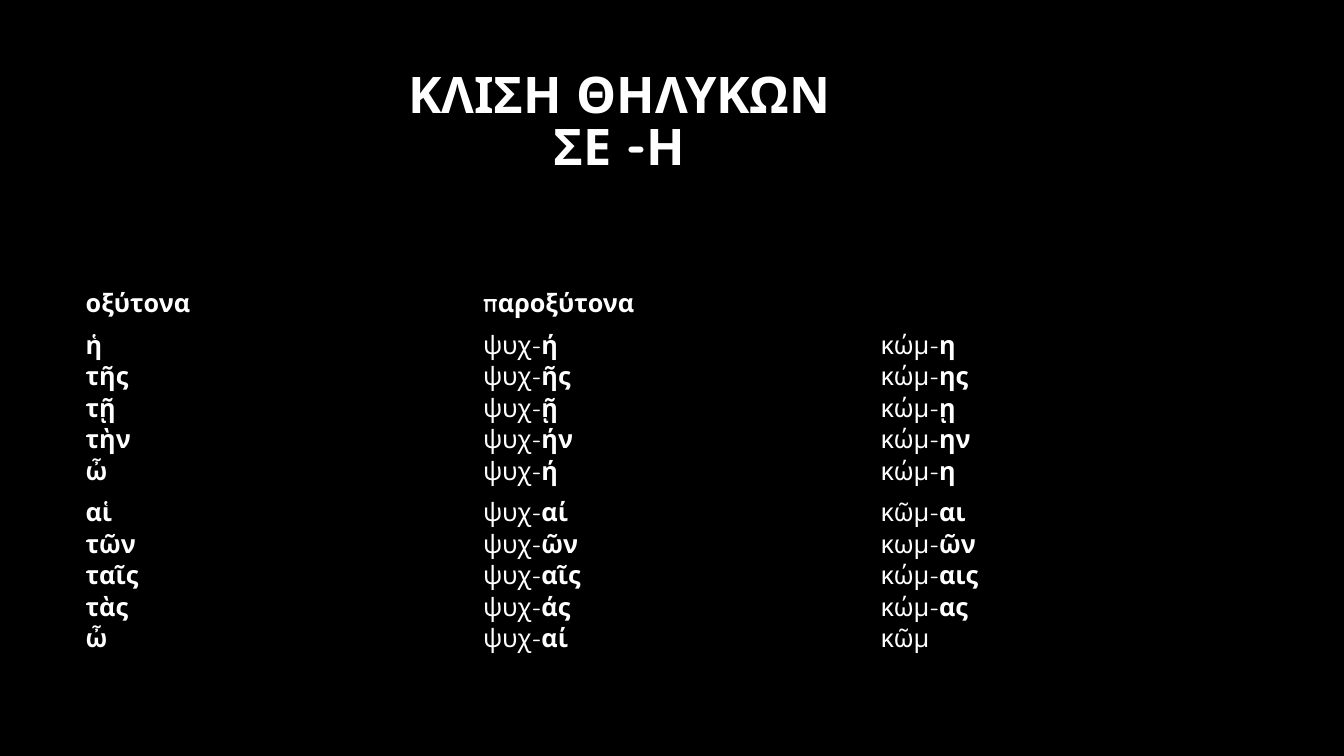
from pptx import Presentation
from pptx.dml.color import RGBColor
from pptx.enum.text import MSO_ANCHOR, PP_ALIGN
from pptx.oxml.ns import qn
from pptx.util import Pt

MIDDLE = MSO_ANCHOR.MIDDLE
CENTER = PP_ALIGN.CENTER
BLACK = RGBColor(0, 0, 0)
WHITE = RGBColor(255, 255, 255)
NO_GRID_STYLE = "{2D5ABB26-0587-4C30-8999-92F81FD0307C}"

TITLE = "ΚΛΙΣΗ ΘΗΛΥΚΩΝ\vΣΕ -Η"
HEADINGS = ["οξύτονα", "παροξύτονα"]
DECLENSION = [
    ["ἡ τῆς τῇ τὴν ὦ",
     "ψυχ-ή ψυχ-ῆς ψυχ-ῇ ψυχ-ήν ψυχ-ή",
     "κώμ-η κώμ-ης κώμ-ῃ κώμ-ην κώμ-η"],
    ["αἱ τῶν ταῖς τὰς ὦ",
     "ψυχ-αί ψυχ-ῶν ψυχ-αῖς ψυχ-άς ψυχ-αί",
     "κῶμ-αι κωμ-ῶν κώμ-αις κώμ-ας κῶμ"],
]


class GrammarSlide:
    font_name = "Quicksand"
    title_size = 36
    body_size = 18

    def __init__(self, presentation):
        self.slide = presentation.slides.add_slide(presentation.slide_layouts[6])
        background = self.slide.background.fill
        background.solid()
        background.fore_color.rgb = BLACK

    def style(self, run, size, bold=True):
        run.font.name = self.font_name
        run.font.size = Pt(size)
        run.font.bold = bold
        run.font.color.rgb = WHITE

    def title(self, text, left, top, width, height):
        frame = self.slide.shapes.add_textbox(
            Pt(left), Pt(top), Pt(width), Pt(height)).text_frame
        frame.word_wrap = True
        frame.vertical_anchor = MIDDLE
        frame.text = text
        heading = frame.paragraphs[0]
        heading.alignment = CENTER
        heading.line_spacing = 0.86
        for run in heading.runs:
            self.style(run, self.title_size)

    def table(self, left, top, column_width, row_heights, columns):
        table = self.slide.shapes.add_table(
            len(row_heights), columns, Pt(left), Pt(top),
            Pt(column_width * columns), Pt(sum(row_heights))).table
        table.first_row = False
        table.horz_banding = False
        table._tbl.tblPr.find(qn("a:tableStyleId")).text = NO_GRID_STYLE
        for column in table.columns:
            column.width = Pt(column_width)
        for row, height in zip(table.rows, row_heights):
            row.height = Pt(height)
        for cell in table.iter_cells():
            cell.fill.background()
            cell.vertical_anchor = MIDDLE
        return table

    def heading(self, cell, text):
        cell.text_frame.text = text
        self.style(cell.text_frame.paragraphs[0].runs[0], self.body_size)

    def forms(self, cell, words, has_stem):
        paragraph = cell.text_frame.paragraphs[0]
        for index, word in enumerate(words):
            if index:
                paragraph.add_line_break()
            stem, hyphen, ending = word.partition("-")
            for part, bold in ((stem + hyphen, not has_stem), (ending, True)):
                if part:
                    run = paragraph.add_run()
                    run.text = part
                    self.style(run, self.body_size, bold)


def main():
    presentation = Presentation()
    presentation.slide_width = Pt(960)
    presentation.slide_height = Pt(540)
    grammar = GrammarSlide(presentation)
    grammar.title(TITLE, 54, 50.4, 776.9, 75.6)
    table = grammar.table(54, 201.6, 283.9, [29.7, 119.7, 119.7], 3)
    table.cell(0, 1).merge(table.cell(0, 2))
    for column, text in enumerate(HEADINGS):
        grammar.heading(table.cell(0, column), text)
    for row, number in enumerate(DECLENSION, start=1):
        for column, words in enumerate(number):
            grammar.forms(table.cell(row, column), words.split(), column > 0)
    presentation.save("out.pptx")


if __name__ == "__main__":
    main()
